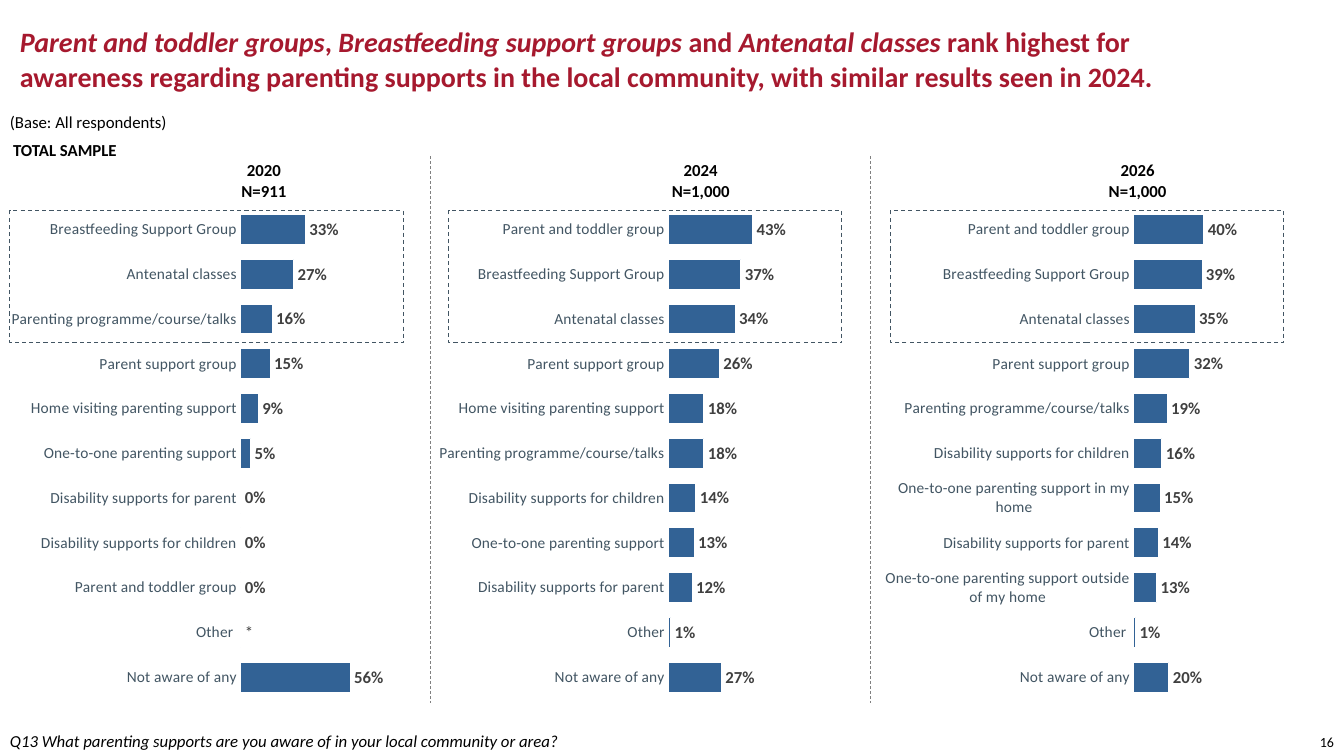
from dataclasses import dataclass
from typing import NamedTuple

from pptx import Presentation
from pptx.chart.data import CategoryChartData as ChartData
from pptx.dml.color import RGBColor as Rgb
from pptx.enum.chart import XL_CHART_TYPE as Kind
from pptx.enum.chart import XL_LABEL_POSITION as Spot
from pptx.enum.chart import XL_TICK_MARK as Tick
from pptx.enum.dml import MSO_LINE as Dash
from pptx.enum.shapes import MSO_CONNECTOR as Link
from pptx.enum.shapes import MSO_SHAPE as Form
from pptx.enum.text import MSO_ANCHOR as Anchor
from pptx.enum.text import PP_ALIGN as Align
from pptx.oxml import parse_xml
from pptx.oxml.ns import nsdecls
from pptx.util import Cm, Pt


@dataclass(frozen=True)
class Theme:
    face: str = "Calibri"
    red: Rgb = Rgb(0xA6, 0x19, 0x2E)
    blue: Rgb = Rgb(0x32, 0x62, 0x95)
    slate: Rgb = Rgb(0x42, 0x55, 0x63)
    grey: Rgb = Rgb(0x80, 0x80, 0x80)
    dark: Rgb = Rgb(0x40, 0x40, 0x40)
    black: Rgb = Rgb(0, 0, 0)
    white: Rgb = Rgb(255, 255, 255)
    head: Pt = Pt(20)
    lead: Pt = Pt(25)
    body: Pt = Pt(12)
    label: Pt = Pt(11)
    small: Pt = Pt(10)
    rule: Pt = Pt(0.5)
    edge: Pt = Pt(0.75)


class Box(NamedTuple):
    left: float
    top: float
    width: float
    height: float

    def cm(self):
        return [Cm(side) for side in self]


class Panel(NamedTuple):
    left: float
    year: str
    base: str
    head: float
    frame: float
    plot: float
    span: float
    rows: list


THEME = Theme()
FEED = "Breastfeeding Support Group"
CLASS = "Antenatal classes"
GROUP = "Parent and toddler group"
TALKS = "Parenting programme/course/talks"
PEER = "Parent support group"
VISIT = "Home visiting parenting support"
ONE = "One-to-one parenting support"
ADULT = "Disability supports for parent"
CHILD = "Disability supports for children"
NONE = "Not aware of any"

PANELS = [
    Panel(0.08, "2020", "N=911", 6.57, 0.17, 0.536, 0.44, [
        (FEED, 0.33), (CLASS, 0.27), (TALKS, 0.16), (PEER, 0.15),
        (VISIT, 0.09), (ONE, 0.05), (ADULT, 0), (CHILD, 0),
        (GROUP, 0), ("Other ", 0), (NONE, 0.56)]),
    Panel(10.85, "2024", "N=1,000", 6.81, 0.46, 0.537, 0.44, [
        (GROUP, 0.43), (FEED, 0.37), (CLASS, 0.34), (PEER, 0.26),
        (VISIT, 0.18), (TALKS, 0.18), (CHILD, 0.14), (ONE, 0.13),
        (ADULT, 0.12), ("Other", 0.01), (NONE, 0.27)]),
    Panel(22.07, "2026", "N=1,000", 6.6, 0.37, 0.582, 0.394, [
        (GROUP, 0.4), (FEED, 0.39), (CLASS, 0.35), (PEER, 0.32),
        (TALKS, 0.19), (CHILD, 0.16), (f"{ONE} in my home", 0.15),
        (ADULT, 0.14), (f"{ONE} outside of my home", 0.13),
        ("Other ", 0.01), (NONE, 0.2)]),
]


def style(font, size, color, bold=False, slant=False):
    font.name, font.size = THEME.face, size
    font.color.rgb = color
    font.bold, font.italic = bold, slant


def add_text(slide, box, text, align=Align.LEFT, wrap=False, size=THEME.body,
             bold=False, slant=False):
    frame = slide.shapes.add_textbox(*box.cm()).text_frame
    frame.word_wrap = wrap
    frame.text = text
    for para in frame.paragraphs:
        para.alignment = align
        for run in para.runs:
            style(run.font, size, THEME.black, bold, slant)
    return frame


def add_title(slide, box):
    frame = slide.shapes.add_textbox(*box.cm()).text_frame
    frame.word_wrap = True
    frame.vertical_anchor = Anchor.MIDDLE
    para = frame.paragraphs[0]
    para.line_spacing = THEME.lead
    parts = ["Parent and toddler groups", ", ", "Breastfeeding support groups ",
             "and ", "Antenatal classes ",
             "rank highest for awareness regarding parenting supports in the "
             "local community, with similar results seen in 2024."]
    for spot, part in enumerate(parts):
        run = para.add_run()
        run.text = part
        style(run.font, THEME.head, THEME.red, True, spot % 2 == 0)


def add_rule(slide, left, top, end):
    rule = slide.shapes.add_connector(
        Link.STRAIGHT, Cm(left), Cm(top), Cm(left), Cm(end))
    rule.line.color.rgb = THEME.grey
    rule.line.width = THEME.rule
    rule.line.dash_style = Dash.DASH
    rule._element.spPr.append(parse_xml(f'<a:effectLst {nsdecls("a")}/>'))


def add_bars(slide, box, panel):
    names, vals = zip(*panel.rows)
    data = ChartData(number_format="0%")
    data.categories = names
    data.add_series("Series 1", vals)
    chart = slide.shapes.add_chart(Kind.BAR_CLUSTERED, *box.cm(), data).chart
    chart.has_legend = chart.has_title = False
    style(chart.font, THEME.body, THEME.black)

    axis = chart.category_axis
    axis.reverse_order = True
    axis.major_tick_mark = axis.minor_tick_mark = Tick.NONE
    axis.format.line.fill.background()
    style(axis.tick_labels.font, THEME.label, THEME.slate)
    scale = chart.value_axis
    scale.minimum_scale, scale.maximum_scale = 0, 1
    scale.has_major_gridlines = scale.visible = False

    plot = chart.plots[0]
    plot.gap_width = 50
    plot.vary_by_categories = False
    bars = plot.series[0]
    bars.format.fill.solid()
    bars.format.fill.fore_color.rgb = THEME.blue
    bars.format.line.color.rgb = THEME.white
    bars.format.line.width = THEME.edge
    labels = bars.data_labels
    labels.show_value = True
    labels.number_format = "0%"
    labels.number_format_is_linked = False
    labels.position = Spot.OUTSIDE_END
    style(labels.font, THEME.body, THEME.dark, True)

    area = chart._chartSpace.chart.plotArea
    for old in area.findall("{*}layout"):
        area.remove(old)
    sides = {"x": panel.plot, "y": 0.02, "w": panel.span, "h": 0.96}
    modes = '<c:xMode val="edge"/><c:yMode val="edge"/>'
    sizes = "".join(f'<c:{key} val="{val}"/>' for key, val in sides.items())
    area.insert(0, parse_xml(
        f'<c:layout {nsdecls("c")}><c:manualLayout>'
        f'<c:layoutTarget val="inner"/>{modes}{sizes}'
        '</c:manualLayout></c:layout>'))
    return bars


def add_star(bars, spot):
    label = bars.points[spot].data_label
    label.text_frame.text = "*"
    style(label.text_frame.paragraphs[0].runs[0].font, THEME.body, THEME.dark)
    label.position = Spot.OUTSIDE_END


def add_panel(slide, box, panel):
    bars = add_bars(slide, box, panel)
    for spot, (name, val) in enumerate(panel.rows):
        if name.strip() == "Other" and val == 0:
            add_star(bars, spot)
    head = Box(box.left + panel.head - 1, box.top - 1.05, 2, 1.27)
    add_text(slide, head, f"{panel.year}\n{panel.base}", Align.CENTER, bold=True)
    edge = Box(box.left + panel.frame, box.top + 0.35, 9.91, 3.33)
    frame = slide.shapes.add_shape(Form.RECTANGLE, *edge.cm())
    frame.shadow.inherit = False
    frame.fill.background()
    frame.line.color.rgb = THEME.slate
    frame.line.width = THEME.edge
    frame.line.dash_style = Dash.DASH


def main():
    deck = Presentation()
    deck.slide_width, deck.slide_height = Cm(33.87), Cm(19.05)
    slide = deck.slides.add_slide(deck.slide_layouts[6])
    add_title(slide, Box(0.25, 0.25, 29.21, 2.44))
    add_text(slide, Box(0, 2.7, 4.52, 0.76), "(Base: All respondents)")
    add_text(slide, Box(0.08, 3.4, 3.15, 0.76), "TOTAL SAMPLE", bold=True)
    for left in (10.85, 21.94):
        add_rule(slide, left, 3.94, 17.71)
    for panel in PANELS:
        add_panel(slide, Box(panel.left, 4.96, 11.18, 12.93), panel)
    add_text(slide, Box(0, 18.29, 24.77, 0.76),
             "Q13 What parenting supports are you aware of in your local "
             "community or area?", wrap=True, slant=True)
    page = add_text(slide, Box(32.92, 18.36, 0.95, 0.69), "16", Align.RIGHT,
                    size=THEME.small)
    page.vertical_anchor = Anchor.MIDDLE
    deck.save("out.pptx")


if __name__ == "__main__":
    main()
